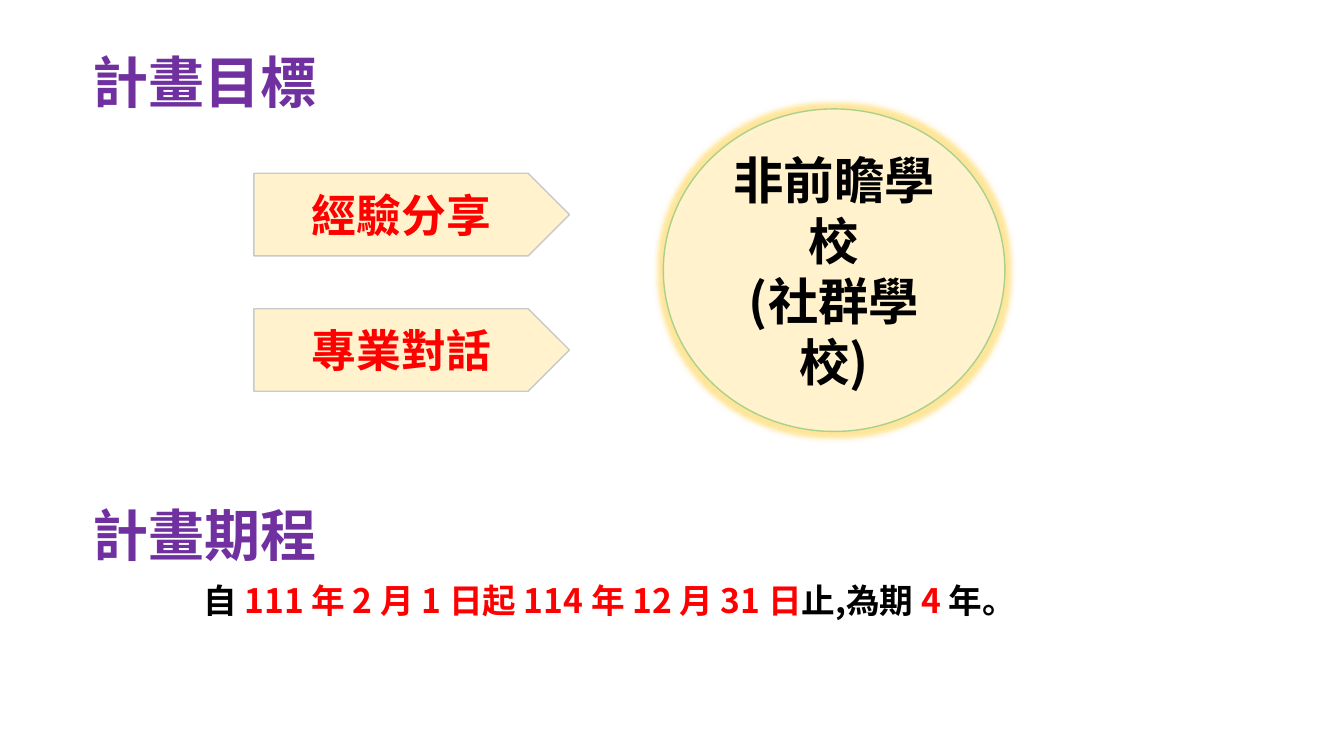
import pptx
import pptx.util
import pptx.dml.color
import pptx.enum.shapes
import pptx.enum.text
import pptx.oxml
import pptx.oxml.ns

Pt = pptx.util.Pt
Shape = pptx.enum.shapes.MSO_SHAPE
Align = pptx.enum.text.PP_ALIGN
Anchor = pptx.enum.text.MSO_ANCHOR

GOAL = "計畫目標"
SCHEDULE = "計畫期程"
ACTIVITIES = ["經驗分享", "專業對話"]
SCHOOLS = ["非前瞻學校", "(社群學校)"]
PERIOD = [
    ("自 ", "ink"),
    ("111 年 2 月 1 日起 114 年 12 月 31 日", "accent"),
    ("止,為期 ".replace(",", ","), "ink"),
    ("4 ", "accent"),
    ("年。", "ink"),
]

THEME = {
    "font": "Noto Sans CJK SC",
    "heading": "7030A0", "ink": "000000", "accent": "FF0000",
    "panel": "FFF2CC", "arrow_line": "C9C9C9", "circle_line": "A9D18E",
    "glow": "FFC000",
    "heading_size": 40, "circle_size": 36, "arrow_size": 32, "period_size": 24,
}

# left, top, width, height in points
GOAL_BOX = (59, 30.2, 176.4, 55.4)
SCHEDULE_BOX = (59, 354.2, 176.4, 55.4)
PERIOD_BOX = (138.2, 410.4, 667.4, 36)
FIRST_ARROW = (181.4, 123.8, 225.4, 59)
ARROW_STEP = 96.7
CIRCLE = (473.8, 77.8, 244, 230.4)


def color(name):
    return pptx.dml.color.RGBColor.from_string(THEME[name])


def add_run(paragraph, text, size, ink):
    run = paragraph.add_run()
    run.text = text
    formats = {"name": THEME["font"], "size": Pt(THEME[size]), "bold": True}
    for key, value in formats.items():
        setattr(run.font, key, value)
    run.font.color.rgb = color(ink)
    east_asian = pptx.oxml.parse_xml(
        f'<a:ea {pptx.oxml.ns.nsdecls("a")} typeface="{THEME["font"]}"/>')
    run.font._element.find(pptx.oxml.ns.qn("a:latin")).addnext(east_asian)


def write(shape, paragraphs, size, align=Align.LEFT, anchor=Anchor.TOP, wrap=True):
    """Fill a shape with paragraphs, each a list of (text, colour name) runs."""
    frame = shape.text_frame
    formats = {"word_wrap": wrap, "vertical_anchor": anchor,
               "auto_size": pptx.enum.text.MSO_AUTO_SIZE.NONE}
    for key, value in formats.items():
        setattr(frame, key, value)
    for index, runs in enumerate(paragraphs):
        paragraph = frame.add_paragraph() if index else frame.paragraphs[0]
        paragraph.alignment = align
        for text, ink in runs:
            add_run(paragraph, text, size, ink)


def write_heading(shape, text):
    write(shape, [[(text, "heading")]], "heading_size", wrap=False)


def add_panel(slide, kind, box, lines, size, ink, outline):
    panel = slide.shapes.add_shape(kind, *map(Pt, box))
    panel.shadow.inherit = False
    panel.fill.solid()
    panel.fill.fore_color.rgb = color("panel")
    panel.line.color.rgb = color(outline)
    panel.line.width = Pt(1)
    write(panel, [[(line, ink)] for line in lines], size, Align.CENTER, Anchor.MIDDLE)
    return panel


def add_glow(shape, radius):
    effects = shape._element.spPr.find(pptx.oxml.ns.qn("a:effectLst"))
    effects.append(pptx.oxml.parse_xml(
        f'<a:glow {pptx.oxml.ns.nsdecls("a")} rad="{Pt(radius)}">'
        f'<a:srgbClr val="{THEME["glow"]}"><a:alpha val="40000"/></a:srgbClr></a:glow>'))


def main():
    deck = pptx.Presentation()
    deck.slide_width, deck.slide_height = Pt(960), Pt(540)
    slide = deck.slides.add_slide(deck.slide_layouts[5])

    goal = slide.shapes.title
    for key, value in zip(("left", "top", "width", "height"), GOAL_BOX):
        setattr(goal, key, Pt(value))
    write_heading(goal, GOAL)
    write_heading(slide.shapes.add_textbox(*map(Pt, SCHEDULE_BOX)), SCHEDULE)
    write(slide.shapes.add_textbox(*map(Pt, PERIOD_BOX)), [PERIOD], "period_size")

    left, top, width, height = FIRST_ARROW
    for index, activity in enumerate(ACTIVITIES):
        add_panel(slide, Shape.PENTAGON, (left, top + index * ARROW_STEP, width, height),
                  [activity], "arrow_size", "accent", "arrow_line")

    schools = add_panel(slide, Shape.OVAL, CIRCLE, SCHOOLS,
                        "circle_size", "ink", "circle_line")
    add_glow(schools, 8)

    deck.save("out.pptx")


if __name__ == "__main__":
    main()
